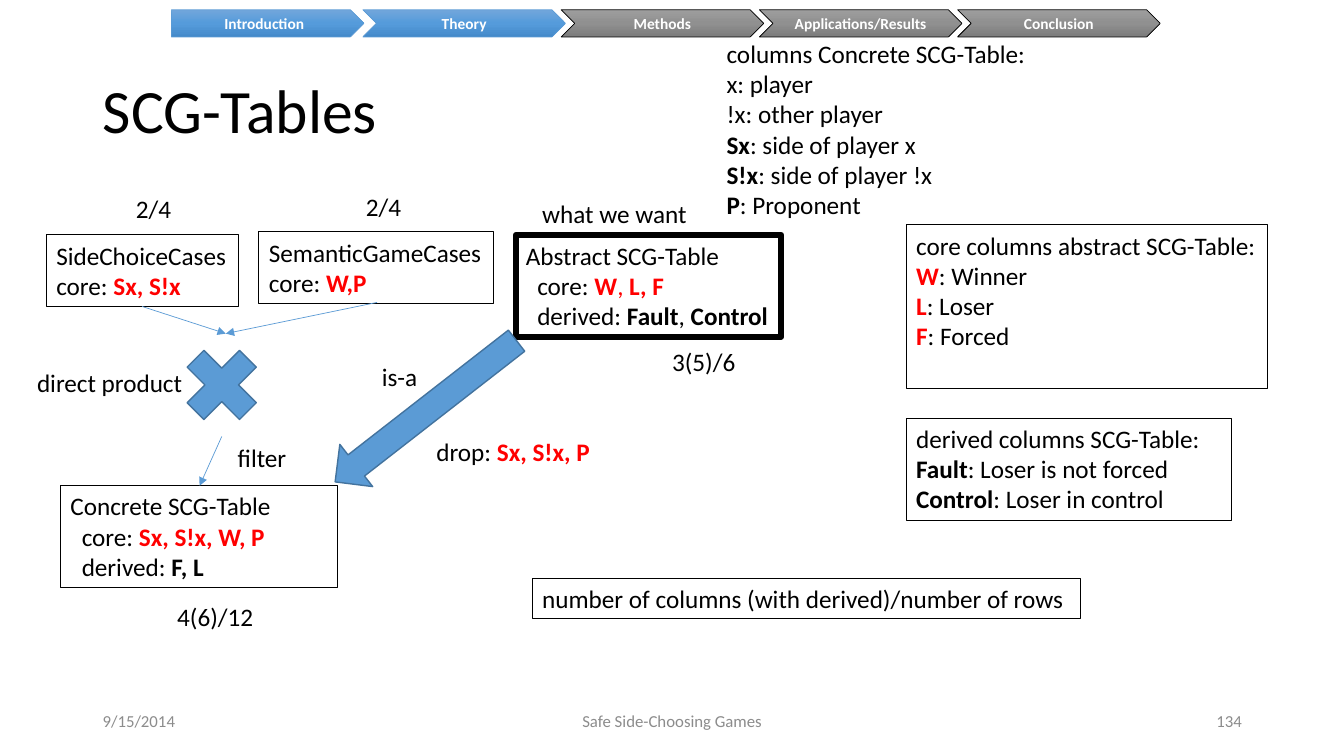
from copy import deepcopy

from lxml.etree import SubElement
from pptx import Presentation
from pptx.dml.color import RGBColor
from pptx.enum.shapes import MSO_CONNECTOR, MSO_SHAPE
from pptx.enum.text import MSO_ANCHOR, MSO_AUTO_SIZE, PP_ALIGN
from pptx.oxml.ns import qn
from pptx.util import Pt

THEME = {
    "font": "Calibri",
    "title": 44, "body": 18, "footer": 12, "nav": 11,
    "black": "000000", "red": "FF0000", "white": "FFFFFF", "muted": "8C8C8C",
    "blue": "5B9BD5", "blue edge": "43739E",
    "done": ["71A6DB", "559BDB", "448ACA"],
    "ahead": ["9D9D9D", "909090", "7C7C7C"],
}
INDENT = 8.1
# A span's first character chooses its format: bold, red bold or plain red
MARKS = {
    "_": {"bold": True},
    "*": {"bold": True, "color": "red"},
    "~": {"color": "red"},
}


def color(name):
    return RGBColor.from_string(THEME.get(name, name))


def write(frame, lines, size="body", ink="black", bold=False,
          align=PP_ALIGN.LEFT, **frame_format):
    """Fill a frame; '|' parts spans and a leading '>' indents a line."""
    for name, value in frame_format.items():
        setattr(frame, name, value)
    for index, line in enumerate(lines):
        para = frame.add_paragraph() if index else frame.paragraphs[0]
        para.alignment = align
        if line.startswith(">"):
            para._p.get_or_add_pPr().set("marL", str(Pt(INDENT)))
            line = line[1:]
        for piece in line.split("|"):
            mark = MARKS.get(piece[0], {})
            span = para.add_run()
            span.text = piece[1:] if mark else piece
            font = {"name": THEME["font"], "size": Pt(THEME[size]),
                    "bold": mark.get("bold", bold)}
            for name, value in font.items():
                setattr(span.font, name, value)
            span.font.color.rgb = color(mark.get("color", ink))


deck = Presentation()
deck.slide_width, deck.slide_height = Pt(960), Pt(540)
page = deck.slides.add_slide(deck.slide_layouts[5])
shapes = page.shapes

# Title
title = shapes.title
title.left, title.top, title.width, title.height = map(Pt, (66.2, 28.8, 828, 104.4))
write(title.text_frame, ["SCG-Tables"], "title", vertical_anchor=MSO_ANCHOR.MIDDLE)
title.text_frame.paragraphs[0].line_spacing = 0.9

# Boxes and labels: place, border width, wrapping, lines
TEXTS = [
    ((368.6, 167.8, 189.4, 72.7), 4.5, False,
     ["Abstract SCG-Table", ">core: |*W|~,|* L, F", ">derived: |_Fault|, |_Control"]),
    ((647.3, 160.6, 257.8, 116.6), 0.75, True,
     ["core columns abstract SCG-Table:", "*W|: Winner", "*L|: Loser", "*F|: Forced"]),
    ((647.3, 298.8, 232.6, 72.7), 0.75, True,
     ["derived columns SCG-Table:", "_Fault|: Loser is not forced",
      "_Control|: Loser in control"]),
    ((43.2, 347, 198, 72.7), 0.75, True,
     ["Concrete SCG-Table", ">core: |*Sx, S!x, W, P", ">derived: |_F, L"]),
    ((185, 165.6, 167.8, 51.1), 0.75, False, ["SemanticGameCases", "core: |*W,P"]),
    ((33.1, 167.8, 137.5, 51.1), 0.75, False, ["SideChoiceCases", "core: |*Sx, S!x"]),
    ((380.2, 413.3, 391.7, 28.8), 0.75, False,
     ["number of columns (with derived)/number of rows"]),
    ((511.9, 23.8, 230.4, 138.2), 0, True,
     ["columns Concrete SCG-Table:", "x: player", "!x: other player",
      "_Sx|: side of player x", "_S!x|: side of player !x", "_P|: Proponent"]),
    ((19.4, 258.5, 119.5, 28.8), 0, False, ["direct product"]),
    ((162.7, 312.5, 49.7, 28.8), 0, False, ["filter"]),
    ((265.7, 254.9, 40.3, 28.8), 0, False, ["is-a"]),
    ((304.6, 308.2, 125.3, 28.8), 0, False, ["drop: |*Sx, S!x, P"]),
    ((380.2, 138.2, 118.8, 28.8), 0, False, ["what we want"]),
    ((90, 134.6, 40.3, 28.8), 0, False, ["2/4"]),
    ((254.2, 133.2, 40.3, 28.8), 0, False, ["2/4"]),
    ((119.5, 426.2, 69.8, 28.8), 0, False, ["4(6)/12"]),
    ((473, 244.1, 60.5, 28.8), 0, False, ["3(5)/6"]),
]
for place, border, wrap, lines in TEXTS:
    box = shapes.add_textbox(*map(Pt, place))
    if border:
        box.line.color.rgb = color("black")
        box.line.width = Pt(border)
    fit = MSO_AUTO_SIZE.NONE if wrap else MSO_AUTO_SIZE.SHAPE_TO_FIT_TEXT
    write(box.text_frame, lines, word_wrap=wrap, auto_size=fit)

# Product sign and is-a arrow
for kind, place, turn in [
    (MSO_SHAPE.MATH_MULTIPLY, (122.4, 239, 72, 72), 0),
    (MSO_SHAPE.DOWN_ARROW, (285.1, 211.7, 38.2, 164.2), 52.1),
]:
    sign = shapes.add_shape(kind, *map(Pt, place))
    sign.shadow.inherit = False
    sign.rotation = turn
    sign.fill.solid()
    sign.fill.fore_color.rgb = color("blue")
    sign.line.color.rgb = color("blue edge")
    sign.line.width = Pt(1)

# Thin arrows
for ends in [(101.5, 218.9, 161.3, 238.3), (269.3, 216, 161.3, 238.3),
             (158.4, 311.8, 142.6, 347)]:
    arrow = shapes.add_connector(MSO_CONNECTOR.STRAIGHT, *map(Pt, ends))
    arrow.line.color.rgb = color("blue")
    arrow.line.width = Pt(0.5)
    SubElement(arrow.line._get_or_add_ln(), qn("a:tailEnd"), type="triangle")
    SubElement(arrow._element.spPr, qn("a:effectLst"))

# Progress bar
STEPS = ["Introduction", "Theory", "Methods", "Applications/Results", "Conclusion"]
for index, name in enumerate(STEPS):
    kind, left, width = MSO_SHAPE.CHEVRON, 259.2 + 141.6 * (index - 1), 144.7
    if index == 0:
        kind, left, width = MSO_SHAPE.PENTAGON, 122.4, 137.5
    state, edge = ("done", "blue") if index < 2 else ("ahead", "black")
    step = shapes.add_shape(kind, Pt(left), Pt(7), Pt(width), Pt(19.4))
    step.shadow.inherit = False
    step.line.color.rgb = color(edge)
    step.line.width = Pt(0.5)
    step.fill.gradient()
    step.fill.gradient_angle = 270
    stops = step._element.spPr.find(qn("a:gradFill")).find(qn("a:gsLst"))
    stops.insert(1, deepcopy(stops[0]))
    for stop, position, shade in zip(step.fill.gradient_stops, (0, 0.5, 1), THEME[state]):
        stop.position = position
        stop.color.rgb = color(shade)
    write(step.text_frame, [name], "nav", "white", True, PP_ALIGN.CENTER,
          vertical_anchor=MSO_ANCHOR.MIDDLE, word_wrap=False,
          margin_top=0, margin_bottom=0)

# Footer
for left, width, words, align in [
    (66.2, 216, "9/15/2014", PP_ALIGN.LEFT),
    (318.2, 324, "Safe Side-Choosing Games", PP_ALIGN.CENTER),
    (678.2, 216, "134", PP_ALIGN.RIGHT),
]:
    footer = shapes.add_textbox(Pt(left), Pt(500.4), Pt(width), Pt(28.8))
    write(footer.text_frame, [words], "footer", "muted", align=align,
          vertical_anchor=MSO_ANCHOR.MIDDLE, word_wrap=True)

deck.save("out.pptx")
